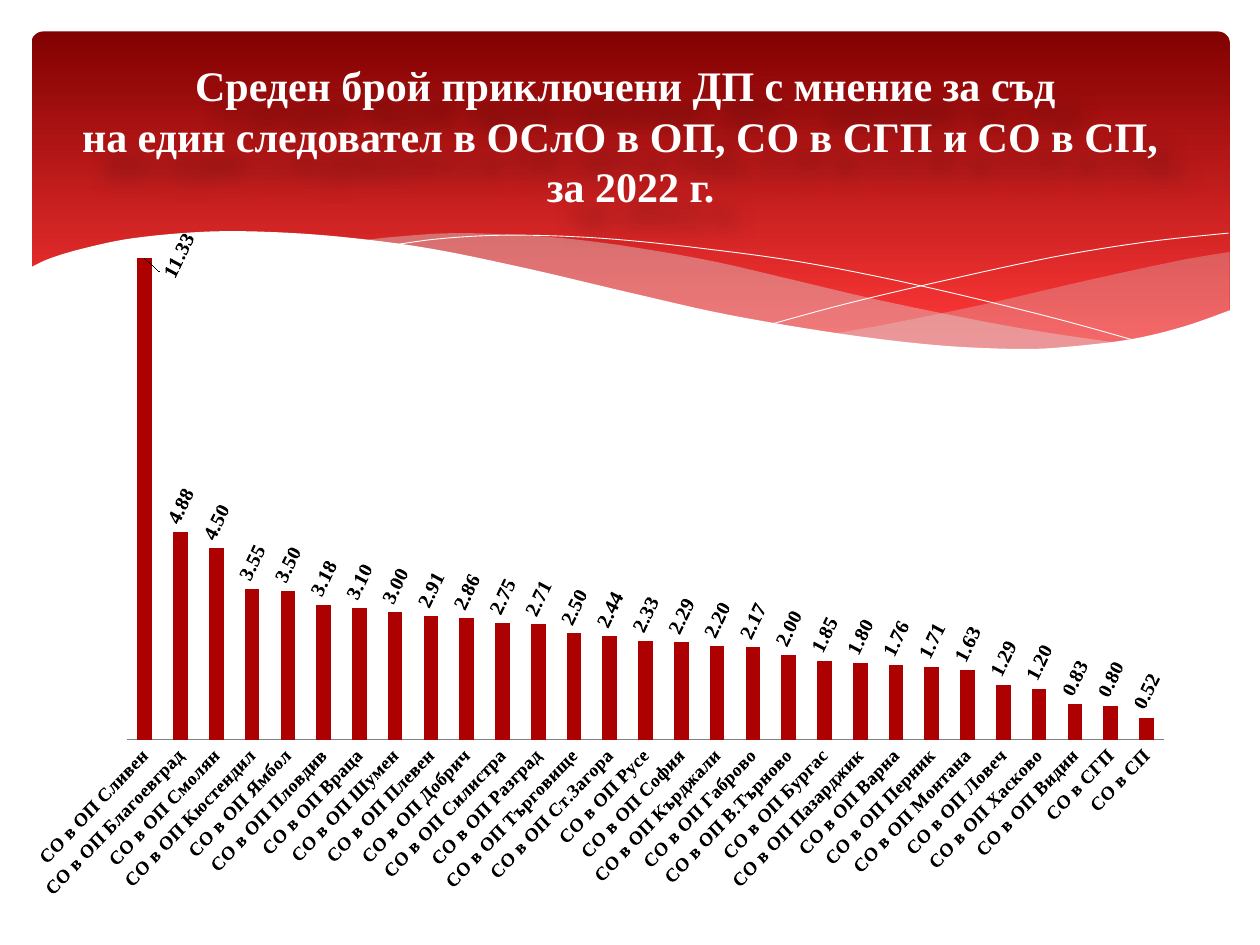
from dataclasses import dataclass
from typing import Optional

import pptx
import pptx.chart.data
import pptx.dml.color
import pptx.enum.chart
import pptx.enum.text
import pptx.oxml
import pptx.oxml.ns
import pptx.util
from pptx.util import Inches, Pt

Point = tuple[float, float]
RGB = pptx.dml.color.RGBColor.from_string
NS = pptx.oxml.ns.nsdecls("a", "c")


@dataclass(frozen=True)
class Theme:
    dark: str = "820101"
    bright: str = "FE3737"
    bar: str = "AD0101"
    mist: str = "DEDEE0"
    white: str = "FFFFFF"
    black: str = "000000"
    axis: str = "808080"
    font: str = "Times New Roman"
    chart_font: str = "Cabin"
    title_size: int = 24
    chart_size: int = 18
    label_size: int = 12
    category_size: int = 11


@dataclass(frozen=True)
class Wave:
    """A closed area bounded by smooth edges, or one open smooth line."""
    edges: list[list[Point]]
    fill: Optional[str] = None
    opacity: int = 100


THEME = Theme()
TITLE = ("Среден брой приключени ДП с мнение за съд \v"
         "на един следовател в ОСлО в ОП, СО в СГП и СО в СП,  \v"
         "за 2022 г.")
WAVES = [
    Wave([[(9.76, 2), (9.35, 2.07), (8.61, 2.23), (7.79, 2.42), (7.06, 2.57), (6.61, 2.65)],
          [(6.61, 2.65), (7.19, 2.72), (7.69, 2.77), (8.14, 2.78), (8.63, 2.75), (9.05, 2.69),
           (9.42, 2.59), (9.76, 2.47)]], THEME.mist, 29),
    Wave([[(8.93, 2.73), (8.07, 2.6), (7.06, 2.4), (6.29, 2.22), (5.69, 2.08), (5.14, 1.98),
           (4.65, 1.91), (4.2, 1.87), (3.61, 1.85), (3.13, 1.88), (2.86, 1.91)],
          [(2.86, 1.91), (3.42, 1.99), (4.04, 2.11), (4.91, 2.32), (5.66, 2.48), (6.34, 2.61),
           (6.95, 2.7), (7.48, 2.76), (7.96, 2.78), (8.48, 2.77), (8.93, 2.73)]],
         THEME.mist, 40),
    Wave([[(3.09, 1.95), (3.44, 1.9), (3.87, 1.87), (4.33, 1.87), (4.89, 1.9), (5.56, 1.97),
           (6.36, 2.08), (7.27, 2.26), (8.31, 2.51), (9.07, 2.72)]]),
    Wave([[(6.13, 2.57), (6.72, 2.41), (7.48, 2.23), (8.36, 2.04), (9.1, 1.92), (9.75, 1.85)]]),
    Wave([[(9.77, 2.46), (9.4, 2.59), (8.99, 2.69), (8.5, 2.75), (8.09, 2.77), (7.44, 2.74),
           (6.68, 2.65), (5.79, 2.5), (5.03, 2.33), (4.18, 2.13), (3.4, 1.97), (2.71, 1.88),
           (2.11, 1.84), (1.61, 1.84), (1.06, 1.89), (0.67, 1.97), (0.4, 2.05), (0.23, 2.13)],
          [(0.23, 3.29), (9.77, 3.29)]], THEME.white),
]
AVERAGES = {
    "ОП Сливен": 11.33, "ОП Благоевград": 4.88, "ОП Смолян": 4.5, "ОП Кюстендил": 3.55,
    "ОП Ямбол": 3.5, "ОП Пловдив": 3.18, "ОП Враца": 3.1, "ОП Шумен": 3,
    "ОП Плевен": 2.91, "ОП Добрич": 2.86, "ОП Силистра": 2.75, "ОП Разград": 2.71,
    "ОП Търговище": 2.5, "ОП Ст.Загора": 2.44, "ОП Русе": 2.33, "ОП София": 2.29,
    "ОП Кърджали": 2.2, "ОП Габрово": 2.17, "ОП В.Търново": 2, "ОП Бургас": 1.85,
    "ОП Пазарджик": 1.8, "ОП Варна": 1.76, "ОП Перник": 1.71, "ОП Монтана": 1.63,
    "ОП Ловеч": 1.29, "ОП Хасково": 1.2, "ОП Видин": 0.83, "СГП": 0.8, "СП": 0.52,
}


def smooth(points: list[Point], steps: int = 6) -> list[Point]:
    """Run a Catmull-Rom spline through the points."""
    if len(points) < 3:
        return points
    padded = [points[0], *points, points[-1]]
    curve = [points[0]]
    for a, b, c, d in zip(padded, padded[1:], padded[2:], padded[3:]):
        for t in (i / steps for i in range(1, steps + 1)):
            curve.append(tuple(
                (2 * q + (r - p) * t + (2 * p - 5 * q + 4 * r - s) * t ** 2
                 + (3 * q - p - 3 * r + s) * t ** 3) / 2
                for p, q, r, s in zip(a, b, c, d)))
    return curve


def add_wave(shapes, wave: Wave) -> None:
    points = [(Inches(x), Inches(y)) for edge in wave.edges for x, y in smooth(edge)]
    builder = shapes.build_freeform(*points[0])
    builder.add_line_segments(points[1:], close=wave.fill is not None)
    s = builder.convert_to_shape()
    s.shadow.inherit = False
    if wave.fill is None:
        s.fill.background()
        s.line.color.rgb = RGB(THEME.white)
        s.line.width = Pt(0.5)
        return
    s.line.fill.background()
    s.fill.solid()
    s.fill.fore_color.rgb = RGB(wave.fill)
    if wave.opacity < 100:
        color = s.element.spPr.xpath("a:solidFill/a:srgbClr")[0]
        color.append(pptx.oxml.parse_xml(f'<a:alpha {NS} val="{wave.opacity * 1000}"/>'))


def add_banner(shapes) -> None:
    s = shapes.add_shape(pptx.enum.shapes.MSO_SHAPE.ROUNDED_RECTANGLE,
                         Inches(0.25), Inches(0.25), Inches(9.51), Inches(2.7))
    s.adjustments[0] = 0.034
    s.shadow.inherit = False
    s.line.fill.background()
    s.fill.gradient()
    s.fill.gradient_angle = 270
    for stop, color, position in zip(s.fill.gradient_stops, (THEME.dark, THEME.bright), (0, 0.9)):
        stop.color.rgb = RGB(color)
        stop.position = position


def set_font(font, size: int, name: str, color: str, bold: bool = True) -> None:
    font.size, font.name, font.bold = Pt(size), name, bold
    font.color.rgb = RGB(color)


def rotate_text(parent, degrees: int) -> None:
    body = parent.xpath("c:txPr/a:bodyPr")[0]
    body.set("rot", str(degrees * 60000))
    body.set("vert", "horz")


def layout_xml(**values):
    """Build a manual chart layout from its child elements in order."""
    children = "".join(f'<c:{tag} val="{value}"/>' for tag, value in values.items())
    return pptx.oxml.parse_xml(
        f"<c:layout {NS}><c:manualLayout>{children}</c:manualLayout></c:layout>")


def add_averages_chart(shapes) -> None:
    data = pptx.chart.data.CategoryChartData(number_format="0.00")
    data.categories = [f"СО в {office}" for office in AVERAGES]
    data.add_series("Series 1", list(AVERAGES.values()))
    chart = shapes.add_chart(pptx.enum.chart.XL_CHART_TYPE.COLUMN_CLUSTERED, Inches(0.28),
                             Inches(1.78), Inches(9.53), Inches(5.59), data).chart
    chart.has_legend = chart.has_title = False
    set_font(chart.font, THEME.chart_size, THEME.chart_font, THEME.black, False)

    values, categories = chart.value_axis, chart.category_axis
    values.minimum_scale, values.maximum_scale = 0, 12
    values.has_major_gridlines = values.visible = False
    categories.major_tick_mark = pptx.enum.chart.XL_TICK_MARK.NONE
    categories.format.line.color.rgb = RGB(THEME.axis)
    set_font(categories.tick_labels.font, THEME.category_size, THEME.font, THEME.black)
    rotate_text(chart.element.xpath(".//c:catAx")[0], -45)

    plot = chart.plots[0]
    plot.gap_width = 145
    plot.vary_by_categories = False
    series = plot.series[0]
    series.format.fill.solid()
    series.format.fill.fore_color.rgb = RGB(THEME.bar)
    labels = series.data_labels
    labels.show_value = True
    labels.number_format, labels.number_format_is_linked = "0.00", False
    first_label = series.points[0].data_label
    for label in (labels, first_label):
        label.position = pptx.enum.chart.XL_LABEL_POSITION.OUTSIDE_END
        set_font(label.font, THEME.label_size, THEME.font, THEME.black)
    for parent in chart.element.xpath(".//c:ser/c:dLbls | .//c:ser/c:dLbls/c:dLbl"):
        rotate_text(parent, -63)
    chart.element.xpath(".//c:dLbl")[0].insert(1, layout_xml(x=0.03, y=0.04))

    area = chart.element.xpath(".//c:plotArea")[0]
    for old in area.xpath("c:layout"):
        area.remove(old)
    area.insert(0, layout_xml(layoutTarget="inner", xMode="edge", yMode="edge",
                              x=0.025, y=0.008, w=0.912, h=0.724))


def add_title(shapes) -> None:
    s = shapes.add_textbox(Inches(0.2), Inches(0.21), Inches(9.61), Inches(1.73))
    s.element.spPr.append(pptx.oxml.parse_xml(
        f'<a:effectLst {NS}><a:outerShdw blurRad="152400" dist="254000" dir="2700000">'
        f'<a:srgbClr val="{THEME.black}"><a:alpha val="30000"/></a:srgbClr>'
        '</a:outerShdw></a:effectLst>'))
    tf = s.text_frame
    tf.word_wrap = True
    tf.vertical_anchor = pptx.enum.text.MSO_ANCHOR.MIDDLE
    p = tf.paragraphs[0]
    p.text = TITLE
    p.alignment = pptx.enum.text.PP_ALIGN.CENTER
    set_font(p.font, THEME.title_size, THEME.font, THEME.white)


def main() -> None:
    prs = pptx.Presentation()
    prs.slide_width, prs.slide_height = Inches(10), Inches(7.5)
    shapes = prs.slides.add_slide(prs.slide_layouts[6]).shapes
    add_banner(shapes)
    for wave in WAVES:
        add_wave(shapes, wave)
    add_averages_chart(shapes)
    add_title(shapes)
    prs.save("out.pptx")


if __name__ == "__main__":
    main()
